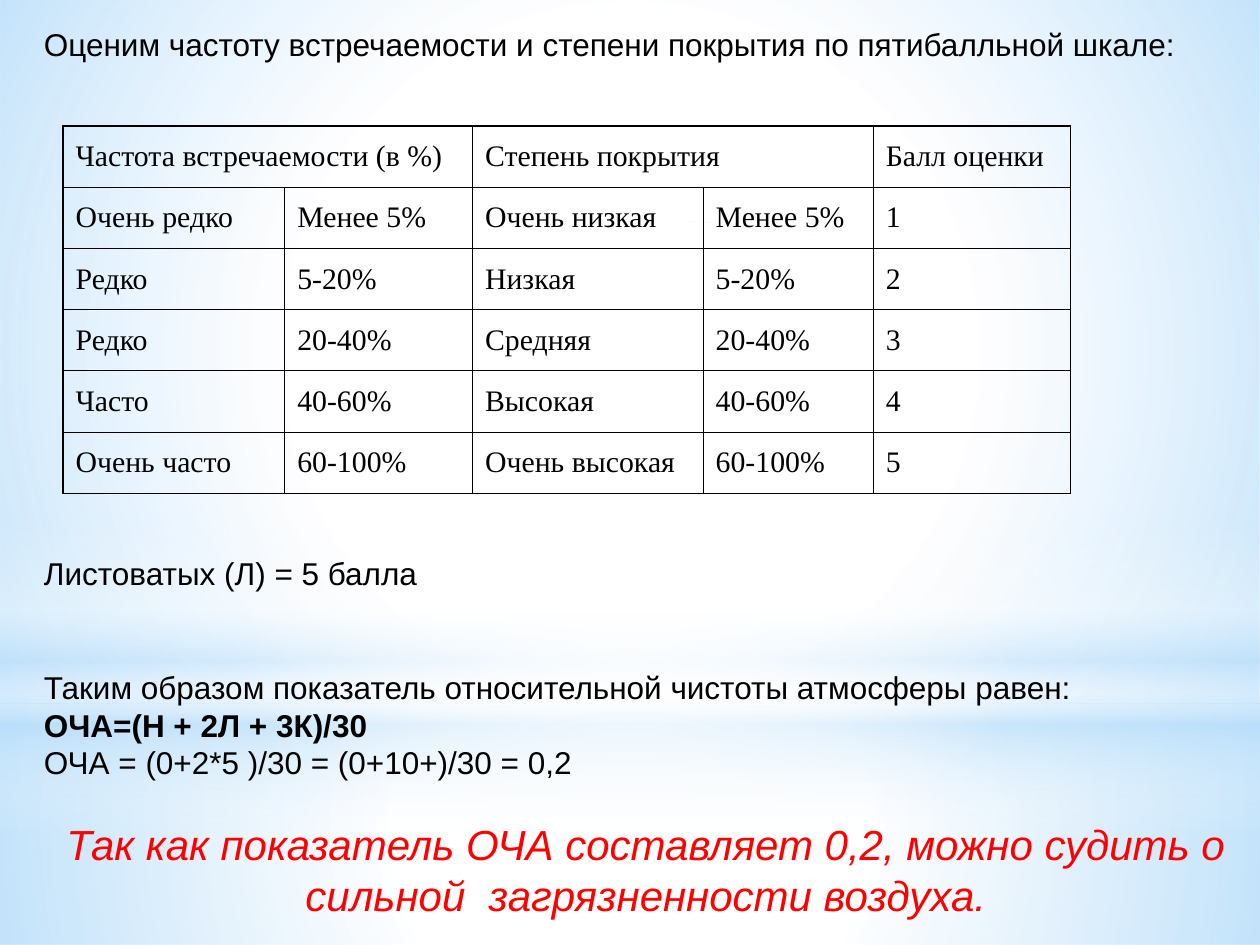
"""Build a slide on the frequency and coverage scale and the air purity index."""
import pptx
import pptx.util
import pptx.dml.color
import pptx.enum.shapes
import pptx.enum.text
import pptx.oxml
import pptx.oxml.ns

Pt = pptx.util.Pt
SHAPE = pptx.enum.shapes.MSO_SHAPE
ALIGN = pptx.enum.text.PP_ALIGN
ANCHOR = pptx.enum.text.MSO_ANCHOR
BLACK = pptx.dml.color.RGBColor(0x00, 0x00, 0x00)
RED = pptx.dml.color.RGBColor(0xFF, 0x00, 0x00)
WHITE = pptx.dml.color.RGBColor(0xFF, 0xFF, 0xFF)
SKY = pptx.dml.color.RGBColor(0xB4, 0xDC, 0xFA)

RADIAL = ('<a:path path="circle"><a:fillToRect l="50000" t="50000" '
          'r="50000" b="50000"/></a:path>')
VERTICAL = '<a:lin ang="5400000" scaled="0"/>'
BACKDROP = [
    (SHAPE.RECTANGLE, 401.8, 138.2, RADIAL,
     [(0, WHITE, 91), (37, WHITE, 76), (100, SKY, 79)]),
    (SHAPE.RECTANGLE, 0, 401.8, RADIAL,
     [(0, WHITE, 89), (48, WHITE, 62), (100, SKY, 79)]),
    (SHAPE.RECTANGLE, 296.6, 180, VERTICAL,
     [(0, WHITE, 0), (29, WHITE, 30), (45, SKY, 40),
      (55, WHITE, 26), (65, SKY, 60), (100, WHITE, 0)]),
    (SHAPE.OVAL, 126, 401.8, RADIAL, [(0, WHITE, 100), (56, WHITE, 0)]),
]

LINE = 21.6
BODY = [
    ("Оценим частоту встречаемости и степени покрытия по пятибалльной шкале:", 0, False),
    ("Листоватых (Л) = 5 балла", 13, False),
    ("Таким образом показатель относительной чистоты атмосферы равен:", 2, False),
    ("ОЧА=(Н + 2Л + 3К)/30", 0, True),
    ("ОЧА = (0+2*5 )/30 = (0+10+)/30 = 0,2", 0, False),
]
CONCLUSION = ("Так как показатель ОЧА составляет 0,2, можно судить о "
              "сильной  загрязненности воздуха.")

COLUMNS = [126.7, 107.3, 131.8, 97.2, 113]
ROW_HEIGHT = 35
HEADER = {0: "Частота встречаемости (в %)", 2: "Степень покрытия", 4: "Балл оценки"}
ROWS = [
    ("Очень редко", "Менее 5%", "Очень низкая", "Менее 5%", "1"),
    ("Редко", "5-20%", "Низкая", "5-20%", "2"),
    ("Редко", "20-40%", "Средняя", "20-40%", "3"),
    ("Часто", "40-60%", "Высокая", "40-60%", "4"),
    ("Очень часто", "60-100%", "Очень высокая", "60-100%", "5"),
]


def set_font(p, name, size, color, bold=False, italic=False):
    for r in p.runs:
        r.font.name, r.font.size = name, Pt(size)
        r.font.bold, r.font.italic = bold, italic
        r.font.color.rgb = color


def add_backdrop(s, kind, top, height, direction, stops):
    sp = s.shapes.add_shape(kind, 0, Pt(top), Pt(720), Pt(height))
    sp.shadow.inherit = False
    sp.line.fill.background()
    sp.fill.background()
    stop_xml = "".join(
        f'<a:gs pos="{pos * 1000}"><a:srgbClr val="{color}">'
        f'<a:alpha val="{alpha * 1000}"/></a:srgbClr></a:gs>'
        for pos, color, alpha in stops)
    gradient = pptx.oxml.parse_xml(
        f'<a:gradFill {pptx.oxml.ns.nsdecls("a")} rotWithShape="1">'
        f'<a:gsLst>{stop_xml}</a:gsLst>{direction}</a:gradFill>')
    sp_pr = sp.element.spPr
    sp_pr.replace(sp_pr.find(pptx.oxml.ns.qn("a:noFill")), gradient)


def add_body(s):
    tf = s.shapes.add_textbox(Pt(18), Pt(10.8), Pt(702), Pt(519)).text_frame
    tf.word_wrap = True
    tf.vertical_anchor = ANCHOR.TOP
    for i, (text, gap, bold) in enumerate(BODY):
        p = tf.paragraphs[0] if i == 0 else tf.add_paragraph()
        p.text = text
        p.line_spacing = Pt(LINE)
        if gap:
            p.space_before = Pt(gap * LINE)
        set_font(p, "Arial", 18, BLACK, bold=bold)
    p = tf.add_paragraph()
    p.text = CONCLUSION
    p.alignment = ALIGN.CENTER
    p.line_spacing = Pt(28.8)
    p.space_before = Pt(LINE)
    set_font(p, "Arial", 24, RED, italic=True)


def style_cell(cell):
    cell.vertical_anchor = ANCHOR.MIDDLE
    cell.fill.background()
    tc_pr = cell._tc.get_or_add_tcPr()
    for i, side in enumerate(("lnL", "lnR", "lnT", "lnB")):
        tc_pr.insert(i, pptx.oxml.parse_xml(
            f'<a:{side} {pptx.oxml.ns.nsdecls("a")} w="{Pt(0.75)}"><a:solidFill>'
            f'<a:srgbClr val="{BLACK}"/></a:solidFill></a:{side}>'))
    p = cell.text_frame.paragraphs[0]
    p.alignment = ALIGN.JUSTIFY
    set_font(p, "Times New Roman", 17, BLACK)


def add_scale(s):
    count = len(ROWS) + 1
    table = s.shapes.add_table(count, len(COLUMNS), Pt(36), Pt(72),
                               Pt(sum(COLUMNS)), Pt(count * ROW_HEIGHT)).table
    for column, width in zip(table.columns, COLUMNS):
        column.width = Pt(width)
    for start in (0, 2):
        table.cell(0, start).merge(table.cell(0, start + 1))
    for j, text in HEADER.items():
        table.cell(0, j).text = text
    for i, row in enumerate(ROWS, 1):
        for j, text in enumerate(row):
            table.cell(i, j).text = text
    for cell in table.iter_cells():
        style_cell(cell)


def main():
    prs = pptx.Presentation()
    prs.slide_width, prs.slide_height = Pt(720), Pt(540)
    s = prs.slides.add_slide(prs.slide_layouts[6])
    for layer in BACKDROP:
        add_backdrop(s, *layer)
    add_body(s)
    add_scale(s)
    prs.save("out.pptx")


if __name__ == "__main__":
    main()
